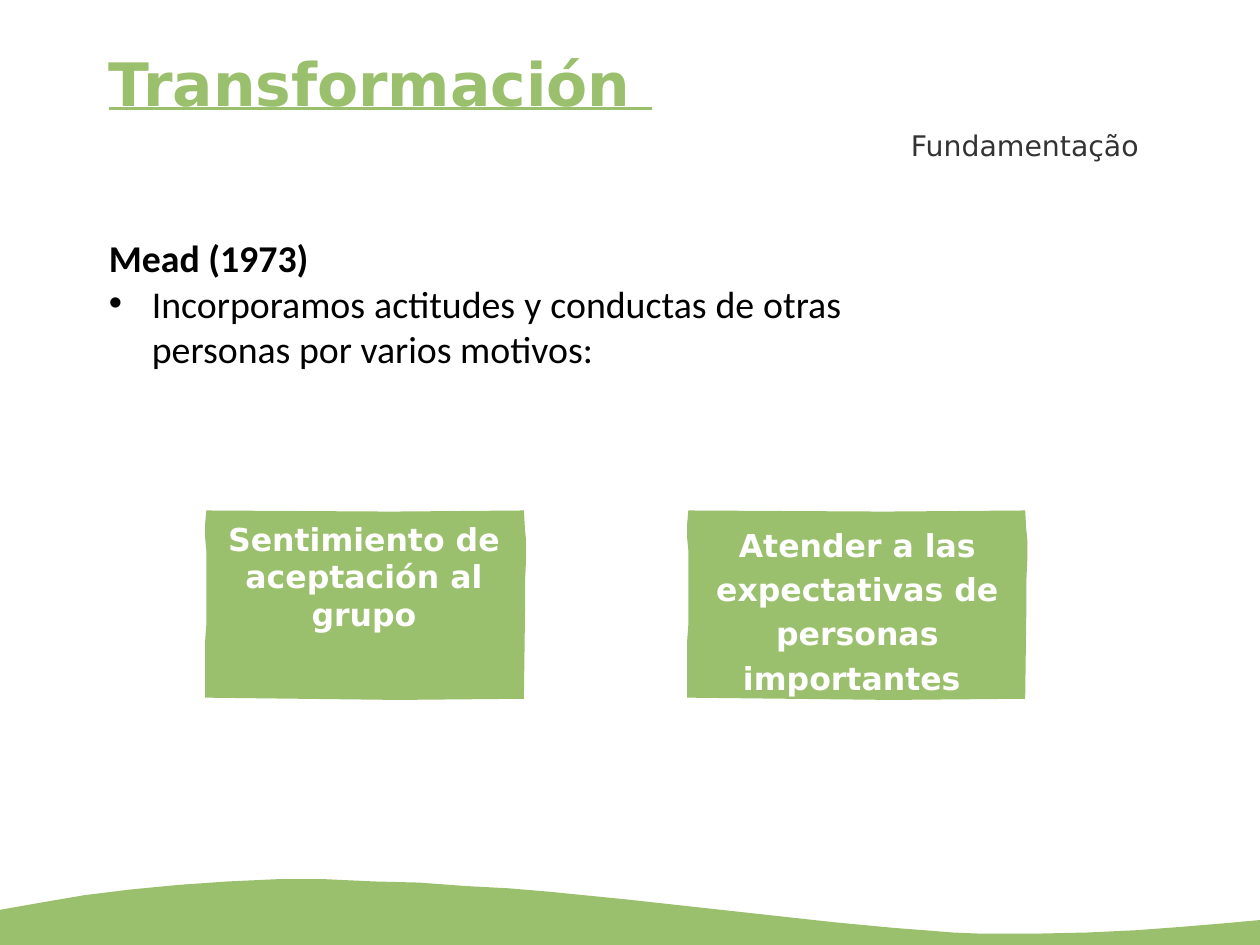
from lxml import etree
from pptx import Presentation
from pptx.dml.color import RGBColor
from pptx.enum.text import MSO_ANCHOR, MSO_AUTO_SIZE, PP_ALIGN
from pptx.oxml.ns import qn
from pptx.util import Inches, Pt

LEFT, RIGHT = PP_ALIGN.LEFT, PP_ALIGN.RIGHT
CENTER, JUSTIFY = PP_ALIGN.CENTER, PP_ALIGN.JUSTIFY
TOP = MSO_ANCHOR.TOP
FIXED, GROW = MSO_AUTO_SIZE.NONE, MSO_AUTO_SIZE.SHAPE_TO_FIT_TEXT
SANS, BODY = "DejaVu Sans", "Calibri"
COLORS = {"green": "9BC06D", "white": "FFFFFF", "black": "000000", "gray": "333333"}
WAVE = [
    (0, 8.02), (0.34, 7.96), (0.75, 7.89), (1.16, 7.84), (1.58, 7.8),
    (2.01, 7.77), (2.44, 7.75), (2.87, 7.75), (3.3, 7.77), (3.7, 7.78),
    (4.1, 7.81), (4.48, 7.83), (4.84, 7.86), (5.54, 7.93), (7.36, 8.13),
    (7.89, 8.18), (8.15, 8.2), (8.4, 8.22), (8.65, 8.23), (9.13, 8.23),
    (9.59, 8.22), (10.02, 8.2), (10.42, 8.17), (10.78, 8.14),
    (11.11, 8.11), (11.11, 8.33), (0, 8.33),
]


class Deck:
    """Holds the style and the current slide."""

    def __init__(self, width, height):
        self.file = Presentation()
        self.file.slide_width = Inches(width)
        self.file.slide_height = Inches(height)
        self.slide = self.file.slides.add_slide(self.file.slide_layouts[5])

    def color(self, name):
        return RGBColor.from_string(COLORS[name])

    def style(self, para, size, color, face=SANS, bold=False, align=LEFT):
        para.alignment = align
        font = para.font
        font.name, font.size, font.bold = face, Pt(size), bold
        font.color.rgb = self.color(color)

    def frame(self, shape, inset=(0, 0), fit=FIXED):
        frame = shape.text_frame
        frame.word_wrap, frame.auto_size = True, fit
        frame.vertical_anchor = TOP
        frame.margin_left = frame.margin_right = Inches(inset[0])
        frame.margin_top = frame.margin_bottom = Inches(inset[1])
        return frame

    def title(self, text, box):
        shape = self.slide.shapes.title
        shape.left, shape.top, shape.width, shape.height = map(Inches, box)
        para = self.frame(shape).paragraphs[0]
        para.text = text
        para.line_spacing = Pt(44.1)
        self.style(para, 38, "green", bold=True)
        para.font.underline = True

    def text(self, lines, box, inset=(0, 0), fit=FIXED, **look):
        shape = self.slide.shapes.add_textbox(*map(Inches, box))
        frame = self.frame(shape, inset, fit)
        for i, line in enumerate(lines):
            para = frame.add_paragraph() if i else frame.paragraphs[0]
            para.text = line
            self.style(para, **look)
        return frame.paragraphs

    def indent(self, para, left, bullet=None):
        props = para._p.get_or_add_pPr()
        props.set("marL", str(Inches(left)))
        if bullet:
            props.set("indent", str(-Inches(left)))
            etree.SubElement(props, qn("a:buFont")).set("typeface", "Arial")
            etree.SubElement(props, qn("a:buChar")).set("char", bullet)

    def form(self, points):
        start, *rest = [(Inches(x), Inches(y)) for x, y in points]
        maker = self.slide.shapes.build_freeform(*start)
        maker.add_line_segments(rest, close=True)
        shape = maker.convert_to_shape()
        shape.shadow.inherit = False
        shape.fill.solid()
        shape.fill.fore_color.rgb = self.color("green")
        shape.line.fill.background()

    def card(self, left, top, width):
        edge = [
            (0.01, 0), (0, 0.11), (0, 0.25), (0.01, 0.35), (0.01, 1.01),
            (0, 1.14), (0, 1.65), (0.6 * width, 1.67), (width - 0.02, 1.66),
            (width - 0.01, 0.91), (width - 0.01, 0.63), (width, 0.41),
            (width, 0.27), (width - 0.01, 0.17), (width - 0.02, 0),
            (0.58 * width, 0.01),
        ]
        self.form([(left + x, top + y) for x, y in edge])


def main():
    deck = Deck(11.11, 8.33)
    deck.form(WAVE)
    deck.card(1.81, 4.5, 2.83)
    deck.card(6.06, 4.5, 3)
    deck.title("Transformación ", (0.96, 0.43, 9.19, 0.88))
    deck.text(["Fundamentação"], (6.31, 1.08, 3.83, 0.4), inset=(0.1, 0.05),
              fit=GROW, size=18, color="gray", align=RIGHT)
    head, point = deck.text(
        ["Mead (1973)",
         "Incorporamos actitudes y conductas de otras personas por varios motivos:"],
        (0.96, 2.07, 6.46, 1.26), size=24, color="black", face=BODY, align=JUSTIFY)
    head.font.bold = True
    deck.indent(point, 0.38, "•")
    label = {"size": 20, "color": "white", "bold": True, "align": CENTER}
    group = deck.text(["Sentimiento de aceptación al grupo"],
                      (1.56, 4.58, 2.92, 1.67), **label)
    deck.indent(group[0], 0.38)
    others = deck.text(["Atender a las expectativas de personas importantes "],
                       (6.31, 4.58, 2.5, 1.44), **label)
    others[0].line_spacing = 1.17
    deck.file.save("out.pptx")


if __name__ == "__main__":
    main()
